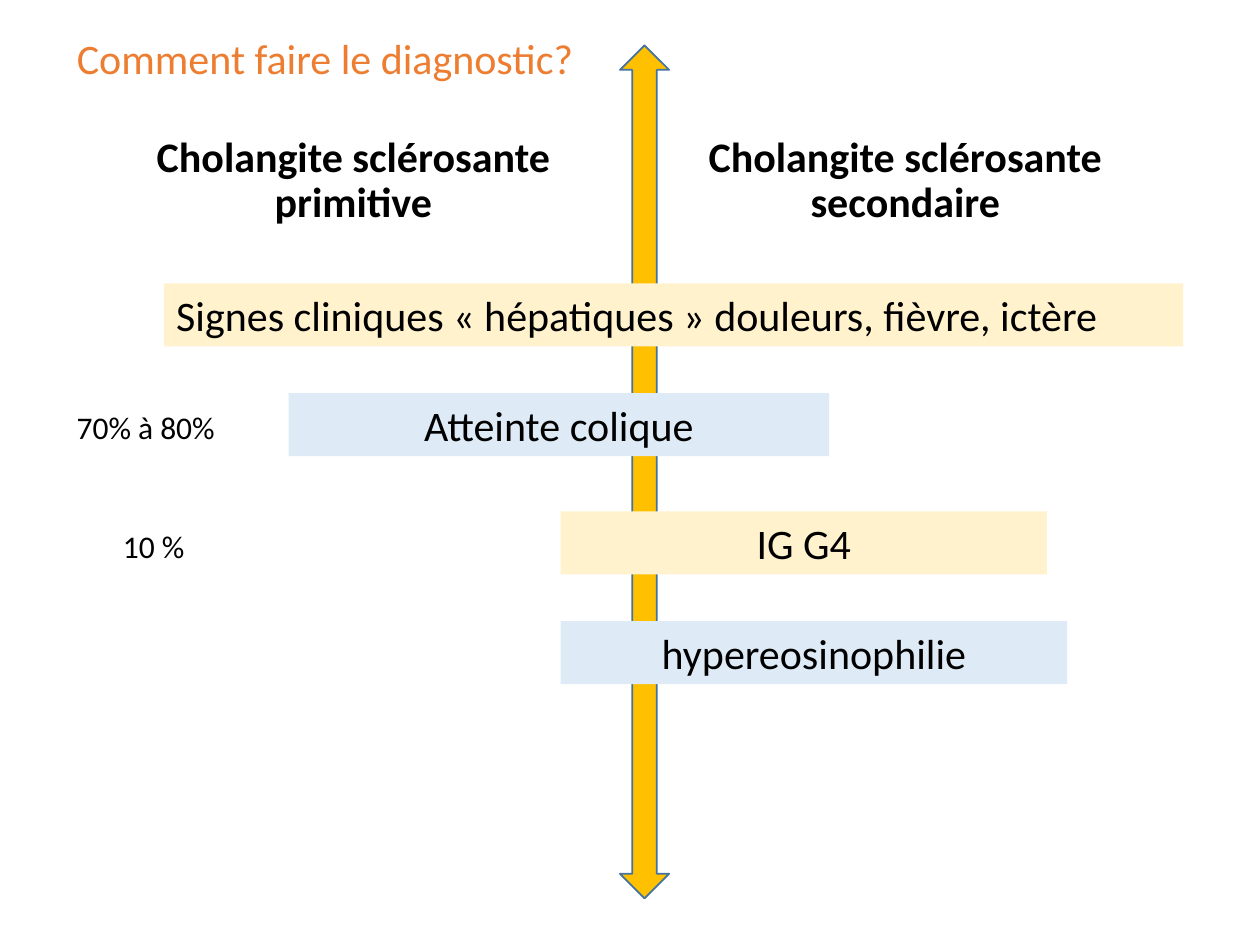
from typing import NamedTuple

from pptx import Presentation
from pptx.dml.color import RGBColor
from pptx.enum.shapes import MSO_SHAPE
from pptx.enum.text import MSO_ANCHOR, PP_ALIGN
from pptx.util import Inches, Pt

COLORS = {
    "text": "000000",
    "title": "ED7D31",
    "arrow": "FFC000",
    "outline": "43739E",
    "cream": "FFF2CC",
    "sky": "DEEBF7",
}
FONT = "Calibri"

# The slide is a grid of 100 columns by 75 rows
COLUMNS, ROWS = 100, 75
WIDTH, HEIGHT = Inches(10), Inches(7.5)
BAR_ROWS, LABEL_ROWS, LABEL_DROP = 5, 4, 0.7
LABEL_LEFT, LABEL_COLUMNS = 5.1, 14.2


class Box(NamedTuple):
    column: float
    row: float
    columns: float
    rows: float


class Heading(NamedTuple):
    text: str
    column: float
    columns: float


class Sign(NamedTuple):
    text: str
    column: float
    row: float
    columns: float
    color: str
    align: PP_ALIGN = PP_ALIGN.CENTER
    frequency: str = ""
    frequency_align: PP_ALIGN = PP_ALIGN.LEFT


HEADINGS = [
    Heading("Cholangite sclérosante primitive", 6.9, 42.3),
    Heading("Cholangite sclérosante secondaire", 50.6, 42.5),
]
SIGNS = [
    Sign("Signes cliniques « hépatiques » douleurs, fièvre, ictère",
         13, 22.5, 80.9, "cream", PP_ALIGN.LEFT),
    Sign("Atteinte colique", 22.9, 31.2, 42.9, "sky", frequency="70% à 80%"),
    Sign("IG G4", 44.5, 40.6, 38.6, "cream", frequency="10 %",
         frequency_align=PP_ALIGN.CENTER),
    Sign("hypereosinophilie", 44.5, 49.3, 40.2, "sky"),
]


def rgb(name: str) -> RGBColor:
    return RGBColor.from_string(COLORS[name])


def place(box: Box) -> tuple[int, int, int, int]:
    return (round(box.column * WIDTH / COLUMNS), round(box.row * HEIGHT / ROWS),
            round(box.columns * WIDTH / COLUMNS), round(box.rows * HEIGHT / ROWS))


def write(shape, text: str, *, size: float = 24, color: str = "text",
          bold: bool = False, align: PP_ALIGN = PP_ALIGN.LEFT,
          anchor: MSO_ANCHOR = MSO_ANCHOR.TOP, spacing: float = 1.0) -> None:
    frame = shape.text_frame
    frame.word_wrap = True
    frame.vertical_anchor = anchor
    paragraph = frame.paragraphs[0]
    paragraph.alignment = align
    paragraph.line_spacing = spacing
    run = paragraph.add_run()
    run.text = text
    run.font.name = FONT
    run.font.size = Pt(size)
    run.font.bold = bold
    run.font.color.rgb = rgb(color)


def add_filled(slide, kind: MSO_SHAPE, box: Box, color: str):
    shape = slide.shapes.add_shape(kind, *place(box))
    shape.shadow.inherit = False
    shape.fill.solid()
    shape.fill.fore_color.rgb = rgb(color)
    shape.line.fill.background()
    return shape


def add_title(slide, text: str, box: Box) -> None:
    title = slide.shapes.title
    title.left, title.top, title.width, title.height = place(box)
    write(title, text, color="title")


def add_heading(slide, heading: Heading) -> None:
    box = Box(heading.column, 9.5, heading.columns, 9)
    write(slide.shapes.add_textbox(*place(box)), heading.text, bold=True,
          align=PP_ALIGN.CENTER, anchor=MSO_ANCHOR.BOTTOM, spacing=0.9)


def add_divider(slide, box: Box) -> None:
    arrow = add_filled(slide, MSO_SHAPE.UP_DOWN_ARROW, box, "arrow")
    arrow.line.color.rgb = rgb("outline")
    arrow.line.width = Pt(1)


def add_sign(slide, sign: Sign) -> None:
    bar = Box(sign.column, sign.row, sign.columns, BAR_ROWS)
    write(add_filled(slide, MSO_SHAPE.RECTANGLE, bar, sign.color), sign.text,
          align=sign.align)
    if sign.frequency:
        label = Box(LABEL_LEFT, sign.row + LABEL_DROP, LABEL_COLUMNS, LABEL_ROWS)
        write(slide.shapes.add_textbox(*place(label)), sign.frequency, size=18,
              align=sign.frequency_align)


def main() -> None:
    deck = Presentation()
    deck.slide_width, deck.slide_height = WIDTH, HEIGHT
    slide = deck.slides.add_slide(deck.slide_layouts.get_by_name("Title Only"))

    # Title and the two diagnoses
    add_title(slide, "Comment faire le diagnostic?", Box(5.1, 2.1, 91.3, 5))
    for heading in HEADINGS:
        add_heading(slide, heading)

    # Axis between the diagnoses, with the signs laid over it
    add_divider(slide, Box(49.2, 3.6, 3.9, 67.7))
    for sign in SIGNS:
        add_sign(slide, sign)

    deck.save("out.pptx")


if __name__ == "__main__":
    main()
